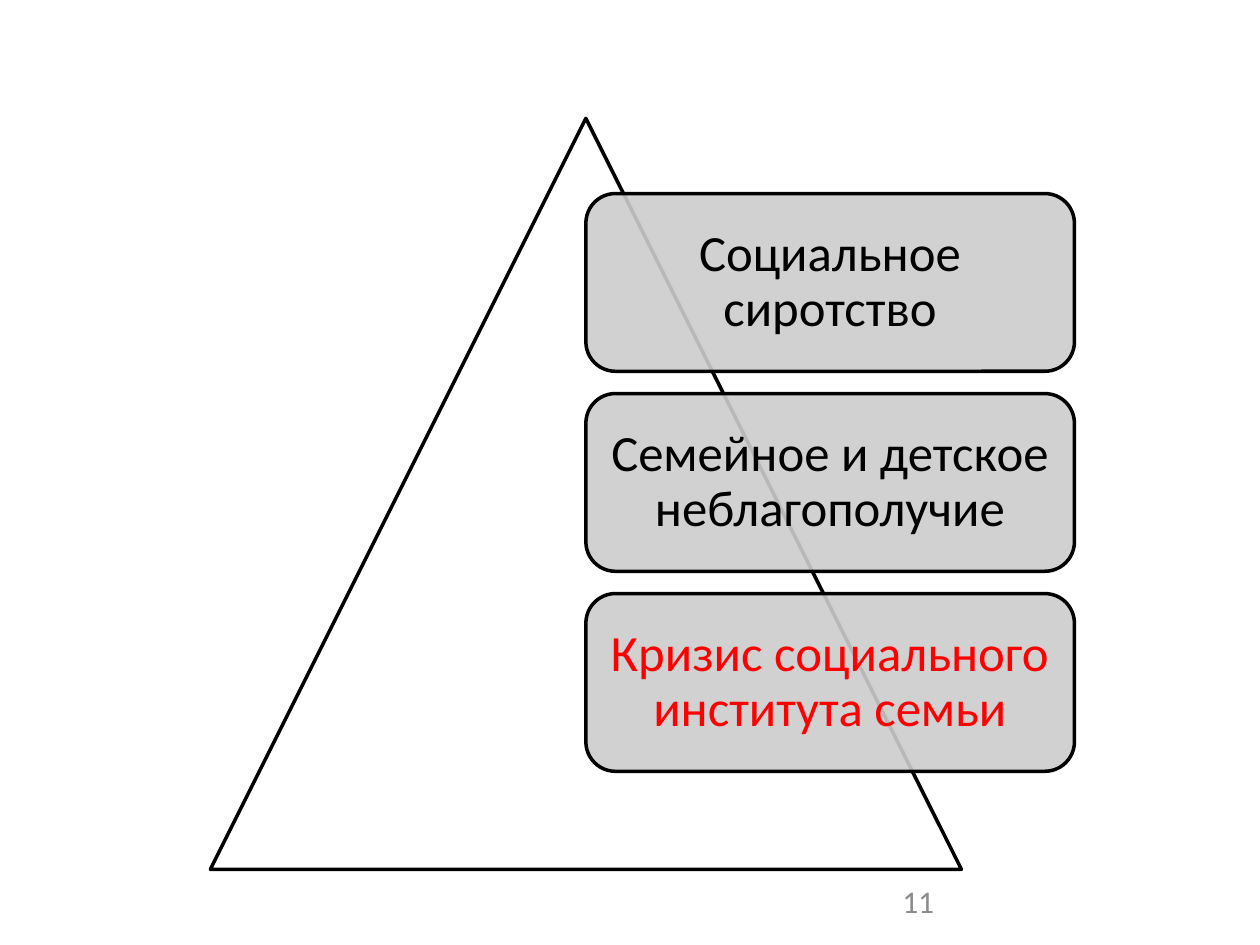
"""Builds a slide with a triangle and three stacked social problem cards."""
from lxml.etree import SubElement
from pptx import Presentation
from pptx.dml.color import RGBColor
from pptx.enum.shapes import MSO_SHAPE
from pptx.enum.text import MSO_ANCHOR, PP_ALIGN
from pptx.oxml.ns import qn
from pptx.util import Pt

BLACK = RGBColor(0, 0, 0)
WHITE = RGBColor(255, 255, 255)
SILVER = RGBColor(0xCC, 0xCC, 0xCC)
GRAY = RGBColor(0x8C, 0x8C, 0x8C)
RED = RGBColor(255, 0, 0)


def add_outlined(kind, left, top, width, height, fill):
    shape = page.shapes.add_shape(kind, Pt(left), Pt(top), Pt(width), Pt(height))
    shape.shadow.inherit = False
    shape.fill.solid()
    shape.fill.fore_color.rgb = fill
    shape.line.color.rgb = BLACK
    shape.line.width = Pt(2)
    return shape


def write_text(frame, text, size, color, align=PP_ALIGN.LEFT, spacing=1.0):
    frame.word_wrap = True
    para = frame.paragraphs[0]
    para.alignment = align
    para.line_spacing = spacing
    span = para.add_run()
    span.text = text
    span.font.name = "Calibri"
    span.font.size = Pt(size)
    span.font.color.rgb = color


deck = Presentation()
deck.slide_width, deck.slide_height = Pt(720), Pt(540)
page = deck.slides.add_slide(deck.slide_layouts[6])

add_outlined(MSO_SHAPE.ISOSCELES_TRIANGLE, 120.2, 67.6, 429.2, 429.2, WHITE)

cards = [
    ("Социальное сиротство", BLACK),
    ("Семейное и детское неблагополучие", BLACK),
    ("Кризис социального института семьи", RED),
]
for index, (text, color) in enumerate(cards):
    card = add_outlined(MSO_SHAPE.ROUNDED_RECTANGLE, 334.8, 110.6 + index * 114.3, 279.2, 101.6, SILVER)
    solid = card.fill._xPr.find(qn("a:solidFill"))
    SubElement(solid[0], qn("a:alpha"), val="90000")
    frame = card.text_frame
    frame.margin_left = frame.margin_right = Pt(8.5)
    frame.margin_top = frame.margin_bottom = Pt(8.5)
    frame.vertical_anchor = MSO_ANCHOR.MIDDLE
    write_text(frame, text, 29, color, PP_ALIGN.CENTER, 0.9)

number = page.shapes.add_textbox(Pt(508.5), Pt(500.5), Pt(162), Pt(29))
write_text(number.text_frame, "11", 18, GRAY)

deck.save("out.pptx")
